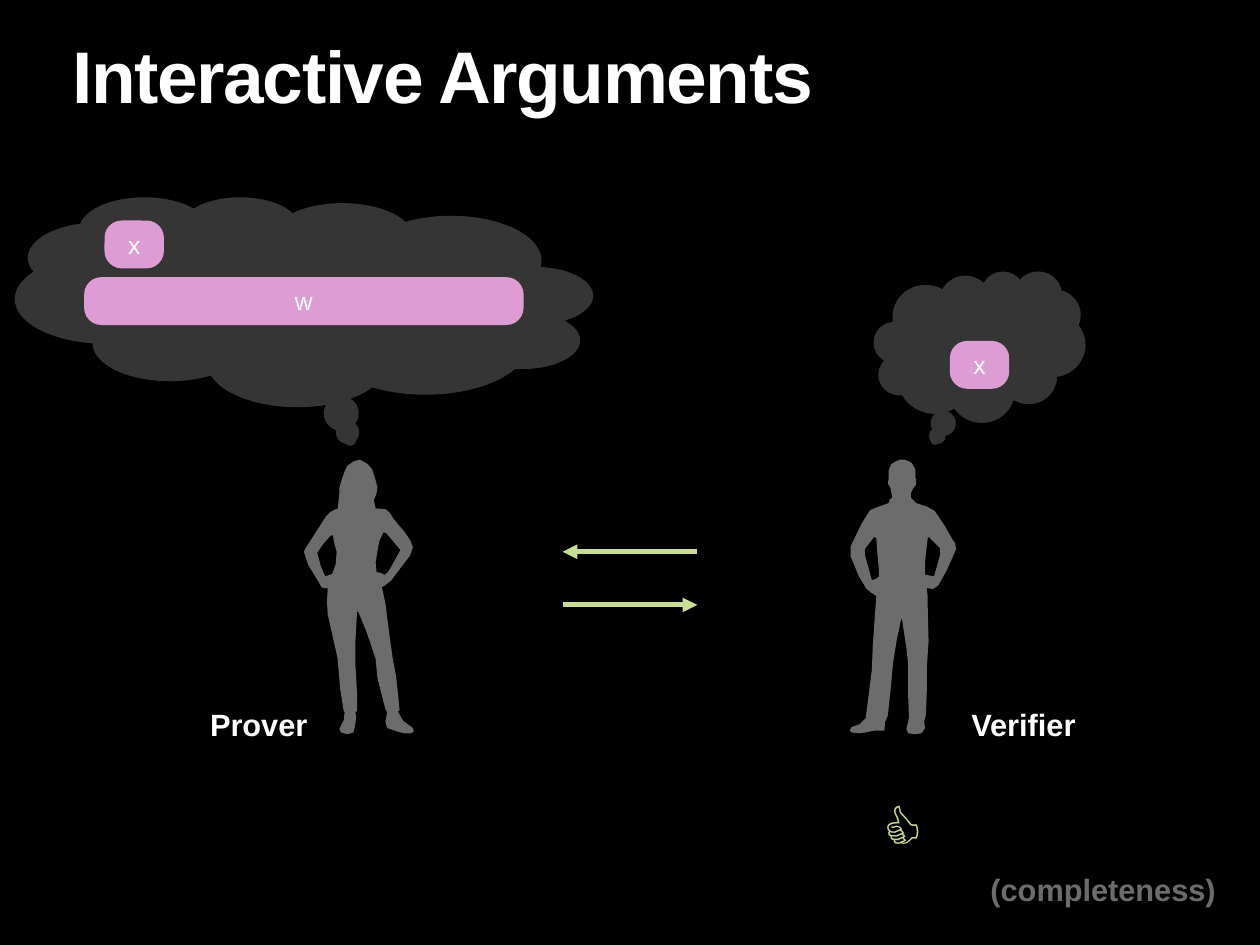
from dataclasses import dataclass

from lxml import etree
from pptx import Presentation
from pptx import util as u
from pptx.dml.color import RGBColor
from pptx.enum import shapes, text
from pptx.oxml import ns

FONT = "Arial"
WHITE, GREY, DARK = "FFFFFF", "6C6C6C", "353535"
PINK, GREEN = "DE9CD5", "C9DD95"
Points = list[tuple[float, float]]


@dataclass
class Cloud:
    box: tuple[float, float, float, float]
    tail: tuple[float, float]
    flip: bool


@dataclass
class Chip:
    word: str
    left: float
    top: float
    width: float


@dataclass
class Label:
    word: str
    box: tuple[float, float, float, float]
    size: float
    color: str


@dataclass
class Arrow:
    start: float
    end: float
    y: float


# Outlines: the body first, then the gaps inside the arms
WOMAN: list[Points] = [
    [(4.06, 5.19), (3.99, 5.21), (3.92, 5.26), (3.89, 5.32), (3.85, 5.44),
     (3.83, 5.51), (3.83, 5.58), (3.82, 5.67), (3.81, 5.75), (3.79, 5.75),
     (3.73, 5.78), (3.68, 5.83), (3.45, 6.19), (3.43, 6.23), (3.44, 6.26),
     (3.48, 6.38), (3.59, 6.56), (3.63, 6.63), (3.65, 6.64), (3.7, 6.64),
     (3.69, 6.79), (3.7, 6.94), (3.81, 7.43), (3.84, 7.78), (3.88, 8.03),
     (3.89, 8.04), (3.88, 8.13), (3.83, 8.23), (3.85, 8.27), (3.92, 8.29),
     (3.99, 8.27), (4.01, 8.18), (4.02, 8.09), (4.01, 8.04), (4.03, 8.03),
     (4.03, 7.84), (4.02, 7.64), (4.01, 7.49), (4.01, 7.27), (4.03, 6.91),
     (4.04, 6.9), (4.14, 7.14), (4.24, 7.44), (4.26, 7.65), (4.35, 8.01),
     (4.37, 8.04), (4.35, 8.15), (4.37, 8.22), (4.43, 8.24), (4.48, 8.26),
     (4.56, 8.28), (4.64, 8.28), (4.67, 8.26), (4.66, 8.22), (4.55, 8.14),
     (4.49, 8.03), (4.51, 8.02), (4.5, 7.91), (4.47, 7.63), (4.43, 7.42),
     (4.39, 7.13), (4.35, 6.81), (4.31, 6.63), (4.33, 6.62), (4.41, 6.56),
     (4.63, 6.27), (4.66, 6.18), (4.63, 6.1), (4.57, 6.01), (4.45, 5.87),
     (4.4, 5.79), (4.35, 5.75), (4.24, 5.74), (4.22, 5.65), (4.25, 5.57),
     (4.26, 5.5), (4.23, 5.39), (4.2, 5.3), (4.15, 5.24), (4.08, 5.2)],
    [(4.33, 6.01), (4.36, 6.02), (4.52, 6.21), (4.46, 6.32), (4.38, 6.46),
     (4.34, 6.49), (4.3, 6.47), (4.25, 6.46), (4.24, 6.35), (4.28, 6.11)],
    [(3.75, 6.04), (3.76, 6.06), (3.77, 6.12), (3.8, 6.23), (3.79, 6.37),
     (3.75, 6.48), (3.67, 6.51), (3.62, 6.39), (3.58, 6.24), (3.65, 6.14),
     (3.73, 6.05)],
]
MAN: list[Points] = [
    [(10.16, 5.19), (10.11, 5.21), (10.06, 5.24), (10.03, 5.31), (10.03, 5.4),
     (10.02, 5.46), (10.05, 5.51), (10.07, 5.62), (10.04, 5.64), (10.03, 5.68),
     (9.92, 5.72), (9.82, 5.76), (9.72, 5.92), (9.6, 6.17), (9.6, 6.28),
     (9.69, 6.5), (9.78, 6.65), (9.83, 6.69), (9.89, 6.73), (9.87, 7.01),
     (9.85, 7.3), (9.84, 7.56), (9.79, 7.96), (9.77, 8.11), (9.7, 8.18),
     (9.61, 8.21), (9.59, 8.25), (9.61, 8.27), (9.69, 8.28), (9.77, 8.27),
     (9.87, 8.25), (9.98, 8.25), (9.99, 8.15), (10.02, 8.08), (10.05, 7.8),
     (10.08, 7.48), (10.12, 7.23), (10.17, 6.99), (10.18, 6.99), (10.23, 7.32),
     (10.25, 7.5), (10.25, 7.87), (10.26, 8.1), (10.23, 8.23), (10.25, 8.28),
     (10.32, 8.29), (10.4, 8.28), (10.44, 8.22), (10.43, 8.15), (10.45, 8.07),
     (10.46, 7.81), (10.46, 7.55), (10.48, 7.24), (10.47, 6.84), (10.47, 6.74),
     (10.46, 6.64), (10.53, 6.65), (10.59, 6.61), (10.69, 6.43), (10.77, 6.25),
     (10.79, 6.2), (10.78, 6.13), (10.76, 6.11), (10.67, 5.95), (10.55, 5.77),
     (10.46, 5.72), (10.34, 5.68), (10.31, 5.65), (10.28, 5.62), (10.28, 5.57),
     (10.31, 5.51), (10.34, 5.47), (10.34, 5.41), (10.33, 5.4), (10.33, 5.3),
     (10.29, 5.23), (10.26, 5.21), (10.21, 5.19)],
    [(10.49, 6.06), (10.5, 6.08), (10.61, 6.19), (10.61, 6.27), (10.54, 6.51),
     (10.5, 6.5), (10.44, 6.49), (10.44, 6.34), (10.47, 6.08)],
    [(9.87, 6.06), (9.89, 6.08), (9.9, 6.22), (9.92, 6.45), (9.92, 6.51),
     (9.88, 6.54), (9.84, 6.55), (9.76, 6.26), (9.76, 6.2), (9.86, 6.07)],
]
CLOUDS = [
    Cloud((0.17, 2.22, 6.52, 2.37), (-0.08, 0.66), True),
    Cloud((9.86, 3.06, 2.39, 1.71), (-0.21, 0.62), False),
]
CHIPS = [
    Chip("x", 1.18, 2.49, 0.67),
    Chip("w", 0.95, 3.13, 4.96),
    Chip("x", 10.72, 3.85, 0.67),
]
ARROWS = [Arrow(6.35, 7.87, 6.83), Arrow(7.87, 6.35, 6.23)]
LABELS = [
    Label("👍", (8.19, 8.86, 4, 0.95), 50, GREEN),
    Label("Prover", (1.52, 7.91, 2.8, 0.53), 25, WHITE),
    Label("Verifier", (10.15, 7.91, 2.8, 0.53), 25, WHITE),
    Label("(completeness)", (11.05, 9.78, 2.8, 0.53), 25, GREY),
]


def paint(fill, color: str) -> None:
    fill.solid()
    fill.fore_color.rgb = RGBColor.from_string(color)


def plain(shape, color: str) -> None:
    shape.shadow.inherit = False
    paint(shape.fill, color)
    shape.line.fill.background()


def write(shape, word: str, size: float, color: str, bold: bool,
          align=text.PP_ALIGN.CENTER, anchor=text.MSO_ANCHOR.MIDDLE):
    frame = shape.text_frame
    frame.text = word
    frame.word_wrap = True
    frame.vertical_anchor = anchor
    for side in ("left", "right", "top", "bottom"):
        setattr(frame, f"margin_{side}", u.Inches(0.06))
    line = frame.paragraphs[0]
    line.alignment = align
    font = line.runs[0].font
    font.name, font.size, font.bold = FONT, u.Pt(size), bold
    paint(font.fill, color)
    return line


def draw_body(slide, paths: list[Points]) -> None:
    loops = [[(u.Inches(x), u.Inches(y)) for x, y in path] for path in paths]
    pen = slide.shapes.build_freeform(*loops[0][0])
    for loop in loops:
        pen.move_to(*loop[0])
        pen.add_line_segments(loop[1:], close=True)
    plain(pen.convert_to_shape(), GREY)


def draw_cloud(slide, cloud: Cloud) -> None:
    shape = slide.shapes.add_shape(
        shapes.MSO_SHAPE.CLOUD_CALLOUT, *map(u.Inches, cloud.box))
    shape.adjustments[0], shape.adjustments[1] = cloud.tail
    if cloud.flip:
        shape._element.spPr.xfrm.set("flipH", "1")
    plain(shape, DARK)


def draw_chip(slide, chip: Chip) -> None:
    box = (chip.left, chip.top, chip.width, 0.54)
    shape = slide.shapes.add_shape(
        shapes.MSO_SHAPE.ROUNDED_RECTANGLE, *map(u.Inches, box))
    shape.adjustments[0] = 0.36
    plain(shape, PINK)
    write(shape, chip.word, 20, WHITE, False)


def draw_arrow(slide, arrow: Arrow) -> None:
    ends = (arrow.start, arrow.y, arrow.end, arrow.y)
    link = slide.shapes.add_connector(
        shapes.MSO_CONNECTOR.STRAIGHT, *map(u.Inches, ends))
    link.line.width = u.Pt(4)
    paint(link.line.fill, GREEN)
    etree.SubElement(link.line._ln, ns.qn("a:tailEnd"), type="triangle")
    etree.SubElement(link._element.spPr, ns.qn("a:effectLst"))


def draw_label(slide, label: Label) -> None:
    box = slide.shapes.add_textbox(*map(u.Inches, label.box))
    write(box, label.word, label.size, label.color, True)


def main() -> None:
    deck = Presentation()
    deck.slide_width, deck.slide_height = u.Inches(14.22), u.Inches(10.67)
    slide = deck.slides.add_slide(deck.slide_layouts[5])
    paint(slide.background.fill, "000000")

    # Title
    title = slide.shapes.title
    title.left, title.top = u.Inches(0.76), u.Inches(0.48)
    title.width, title.height = u.Inches(12.69), u.Inches(1.11)
    line = write(title, "Interactive Arguments", 59.4, WHITE, True,
                 text.PP_ALIGN.LEFT, text.MSO_ANCHOR.TOP)
    line.line_spacing = 0.8
    line.runs[0].font._element.set("spc", "-120")
    title.text_frame.auto_size = text.MSO_AUTO_SIZE.NONE

    # Prover and verifier, their thoughts, messages and captions
    for draw, items in (
        (draw_body, (WOMAN, MAN)), (draw_cloud, CLOUDS), (draw_chip, CHIPS),
        (draw_arrow, ARROWS), (draw_label, LABELS),
    ):
        for item in items:
            draw(slide, item)
    deck.save("out.pptx")


if __name__ == "__main__":
    main()
